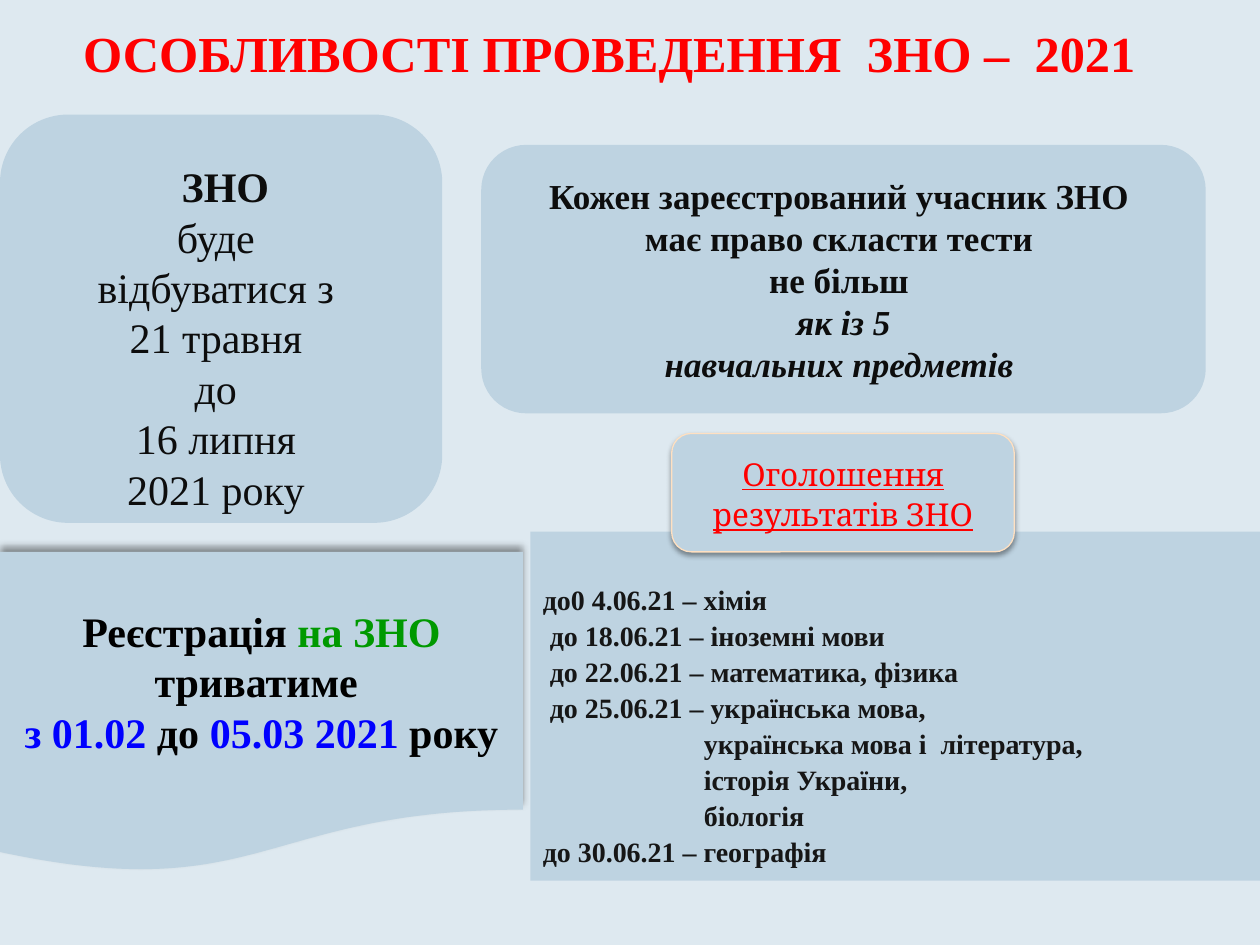
from lxml import etree
from pptx import Presentation
from pptx.dml.color import RGBColor
from pptx.enum.shapes import MSO_SHAPE
from pptx.enum.text import MSO_ANCHOR, PP_ALIGN
from pptx.oxml.ns import qn
from pptx.util import Pt

ROUNDED = MSO_SHAPE.ROUNDED_RECTANGLE
RECTANGLE = MSO_SHAPE.RECTANGLE
DOCUMENT = MSO_SHAPE.FLOWCHART_DOCUMENT
TOP, MIDDLE = MSO_ANCHOR.TOP, MSO_ANCHOR.MIDDLE
LEFT, CENTER = PP_ALIGN.LEFT, PP_ALIGN.CENTER

SERIF = "Times New Roman"
PANEL, BACKGROUND = "BED3E1", "DEE9F0"
RED, GREEN, BLUE, BLACK = "FF0000", "009900", "0000FF", "000000"
INK, SCHEDULE_INK = "0D0D0D", "161616"


def color(value):
    return RGBColor.from_string(value)


def add_shadow(shape, alpha, blur, distance, angle):
    effects = shape._element.spPr.find(qn("a:effectLst"))
    shadow = etree.SubElement(
        effects, qn("a:outerShdw"), blurRad=str(Pt(blur)), dist=str(Pt(distance)),
        dir=str(angle * 60000), algn="ctr", rotWithShape="0")
    tint = etree.SubElement(shadow, qn("a:srgbClr"), val=BLACK)
    etree.SubElement(tint, qn("a:alpha"), val=str(alpha * 1000))


def add_panel(page, kind, box, line=None):
    panel = page.shapes.add_shape(kind, *map(Pt, box))
    panel.shadow.inherit = False
    panel.fill.solid()
    panel.fill.fore_color.rgb = color(PANEL)
    if line:
        panel.line.color.rgb = color(line)
        panel.line.width = Pt(0.75)
    else:
        panel.line.fill.background()
    return panel


def set_frame(shape, anchor=MIDDLE, top=3.6, bottom=3.6):
    frame = shape.text_frame
    frame.word_wrap = True
    frame.vertical_anchor = anchor
    frame.margin_top, frame.margin_bottom = Pt(top), Pt(bottom)
    return frame


def add_para(frame, spans, size, ink=INK, font=SERIF, bold=False, italic=False,
             underline=False, align=CENTER, spacing=1.0, indent=0):
    """Add a paragraph; spans is a string or a list of (text, colour) pairs."""
    first = frame.paragraphs[0]
    para = frame.add_paragraph() if first.runs else first
    para.alignment = align
    para.line_spacing = spacing
    if indent:
        para._p.get_or_add_pPr().set("marL", str(Pt(indent)))
    for text, tone in [(spans, ink)] if isinstance(spans, str) else spans:
        span = para.add_run()
        span.text = text
        span.font.name, span.font.size = font, Pt(size)
        span.font.bold, span.font.italic = bold, italic
        span.font.underline = underline
        span.font.color.rgb = color(tone)


def add_title(page, box):
    frame = set_frame(page.shapes.add_textbox(*map(Pt, box)))
    add_para(frame, "ОСОБЛИВОСТІ ПРОВЕДЕННЯ  ЗНО –  2021 ", 28.8, ink=RED, bold=True)


def add_subject_limit(page, box):
    frame = set_frame(add_panel(page, ROUNDED, box))
    for text in ("Кожен зареєстрований учасник ЗНО ", "має право скласти тести ",
                 "не більш "):
        add_para(frame, text, 20, bold=True)
    for text in ("як із 5", "навчальних предметів "):
        add_para(frame, text, 20, bold=True, italic=True)


def add_results_schedule(page, box):
    frame = set_frame(add_panel(page, RECTANGLE, box), top=24)
    lines = [
        ("до0 4.06.21 – хімія", 0),
        ("до 18.06.21 – іноземні мови", 4),
        ("до 22.06.21 – математика, фізика", 4),
        ("до 25.06.21 – українська мова,", 4),
        ("українська мова і  література,", 92),
        ("історія України,", 92),
        ("біологія", 92),
        ("до 30.06.21 – географія", 0),
    ]
    for text, indent in lines:
        add_para(frame, text, 16, ink=SCHEDULE_INK, bold=True, align=LEFT,
                 spacing=1.07, indent=indent)


def add_results_heading(page, box):
    panel = add_panel(page, ROUNDED, box, line="FFE0C1")
    add_shadow(panel, alpha=38, blur=3.1, distance=1.6, angle=90)
    add_para(set_frame(panel), "Оголошення результатів ЗНО", 18, ink=RED,
             font="Cambria", underline=True, spacing=1.07)


def add_test_dates(page, box):
    frame = set_frame(add_panel(page, ROUNDED, box), anchor=TOP, top=15, bottom=0)
    add_para(frame, "ЗНО", 24, bold=True, indent=5)
    for text in ("буде ", "відбуватися з ", "21 травня ", "до ", "16 липня ",
                 "2021 року "):
        add_para(frame, text, 24)


def add_registration(page, box):
    panel = add_panel(page, DOCUMENT, box)
    add_shadow(panel, alpha=40, blur=4, distance=3, angle=270)
    frame = set_frame(panel)
    for spans in (
        [("Реєстрація ", BLACK), ("на ЗНО", GREEN), (" триватиме ", BLACK)],
        [("з 01.02", BLUE), (" до ", BLACK), ("05.03 2021", BLUE), (" року", BLACK)],
    ):
        add_para(frame, spans, 24, bold=True)


def main():
    deck = Presentation()
    deck.slide_width, deck.slide_height = Pt(720), Pt(540)
    page = deck.slides.add_slide(deck.slide_layouts[6])
    page.background.fill.solid()
    page.background.fill.fore_color.rgb = color(BACKGROUND)

    add_title(page, (0, 8.6, 704, 42.5))
    add_subject_limit(page, (275, 82.8, 414, 153.4))
    add_results_schedule(page, (303.1, 303.8, 416.9, 199.5))
    add_results_heading(page, (383.8, 247.7, 195.8, 67.7))
    add_test_dates(page, (0, 65.5, 252.7, 233.3))
    add_registration(page, (0, 315.4, 298.8, 183.6))
    deck.save("out.pptx")


if __name__ == "__main__":
    main()
